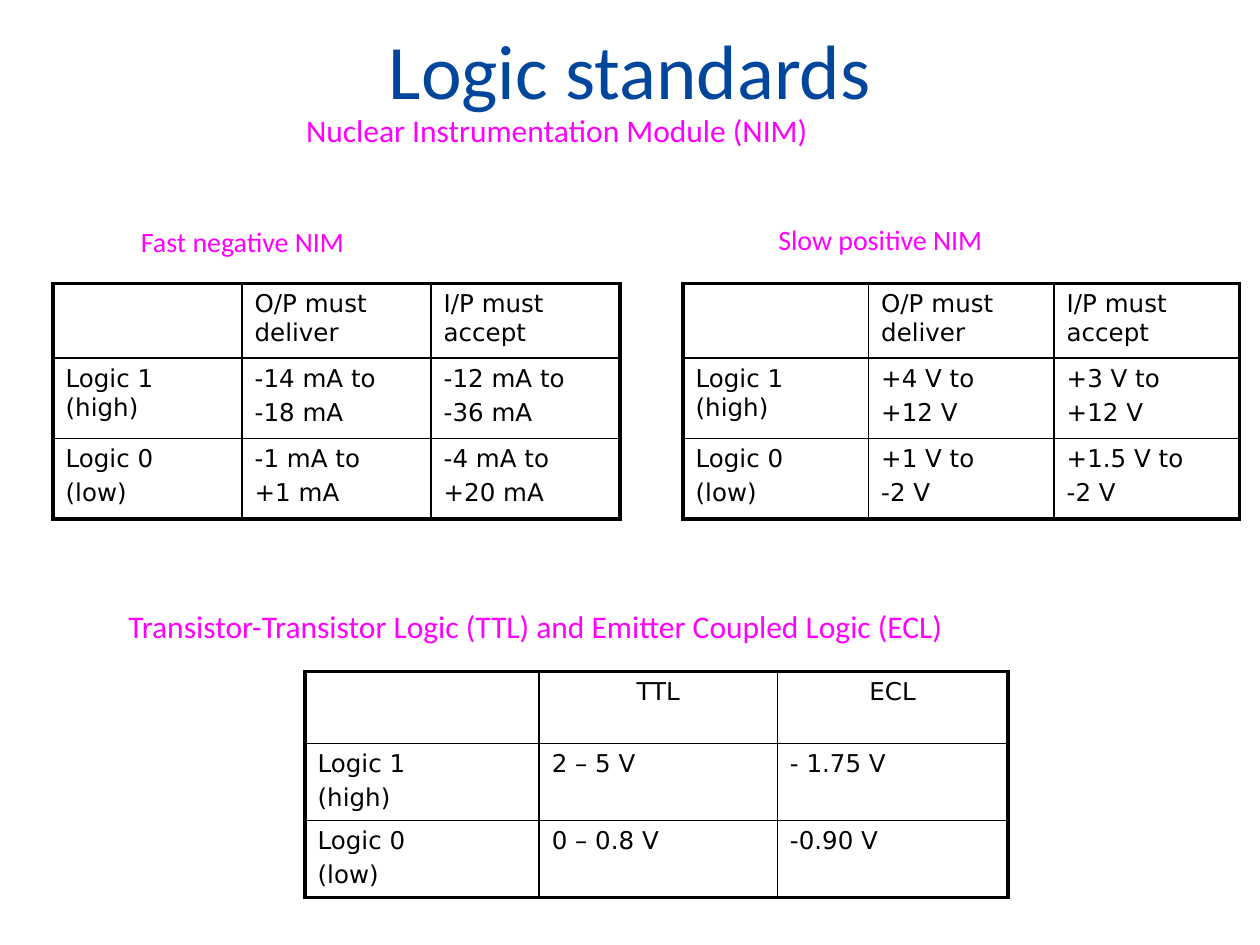
from dataclasses import dataclass

from lxml.etree import SubElement
from pptx import Presentation
from pptx.dml.color import RGBColor
from pptx.enum.text import MSO_ANCHOR, PP_ALIGN
from pptx.oxml.ns import qn
from pptx.util import Cm, Pt


@dataclass(frozen=True)
class Theme:
    heading_font: str = "Calibri"
    table_font: str = "DejaVu Sans"
    title_color: str = "00469C"
    heading_color: str = "FF00FF"
    table_color: str = "000000"
    title_size: float = 44
    section_size: float = 18
    caption_size: float = 16
    table_size: float = 14
    line_gap: float = 2.8
    outer_border: float = 2.25
    inner_border: float = 1


THEME = Theme()

TITLE = ("Logic standards", (1.27, -0.2, 22.86, 3.18))

# text, size, (left, top, width, height) in cm
HEADINGS = [
    ("Nuclear Instrumentation Module (NIM)", THEME.section_size, (5.92, 2.11, 12.88, 1.02)),
    ("Fast negative NIM", THEME.caption_size, (2.59, 4.4, 5.66, 0.94)),
    ("Slow positive NIM", THEME.caption_size, (15.44, 4.36, 5.59, 0.94)),
    ("Transistor-Transistor Logic (TTL) and Emitter Coupled Logic (ECL)",
     THEME.section_size, (2.34, 12.12, 21.84, 1.02)),
]

NIM_HEADER = ["", "O/P must deliver", "I/P must accept"]
NIM_ROWS = [1.5, 1.62, 1.62]

# Each line within a cell is a paragraph of its own.
TABLES = [
    {
        "origin": (1.07, 5.72), "columns": [3.81] * 3, "rows": NIM_ROWS,
        "header_alignment": PP_ALIGN.LEFT,
        "cells": [
            NIM_HEADER,
            ["Logic 1 (high)", "-14 mA to\n-18 mA", "-12 mA to\n-36 mA"],
            ["Logic 0\n(low)", "-1 mA to\n+1 mA", "-4 mA to\n+20 mA"],
        ],
    },
    {
        "origin": (13.77, 5.72), "columns": [3.74] * 3, "rows": NIM_ROWS,
        "header_alignment": PP_ALIGN.LEFT,
        "cells": [
            NIM_HEADER,
            ["Logic 1 (high)", "+4 V to\n+12 V", "+3 V to\n+12 V"],
            ["Logic 0\n(low)", "+1 V to\n-2 V", "+1.5 V to\n-2 V"],
        ],
    },
    {
        "origin": (6.15, 13.54), "columns": [4.72, 4.8, 4.65], "rows": [1.45, 1.55, 1.55],
        "header_alignment": PP_ALIGN.CENTER,
        "cells": [
            ["", "TTL", "ECL"],
            ["Logic 1\n(high)", "2 – 5 V", "- 1.75 V"],
            ["Logic 0\n(low)", "0 – 0.8 V", "-0.90 V"],
        ],
    },
]


def add_run(paragraph, text, font_name, size, color):
    run = paragraph.add_run()
    run.text = text
    run.font.name = font_name
    run.font.size = Pt(size)
    run.font.color.rgb = RGBColor.from_string(color)


def add_text(slide, text, box, size, color, alignment=PP_ALIGN.LEFT, anchor=MSO_ANCHOR.TOP):
    frame = slide.shapes.add_textbox(*map(Cm, box)).text_frame
    frame.word_wrap = True
    frame.vertical_anchor = anchor
    paragraph = frame.paragraphs[0]
    paragraph.alignment = alignment
    add_run(paragraph, text, THEME.heading_font, size, color)


def set_borders(cell, widths):
    """Draw solid cell borders; widths maps L, R, T, B (in that order) to points."""
    properties = cell._tc.get_or_add_tcPr()
    for side, width in widths.items():
        line = SubElement(properties, qn(f"a:ln{side}"), w=str(Pt(width)))
        fill = SubElement(line, qn("a:solidFill"))
        SubElement(fill, qn("a:srgbClr"), val=THEME.table_color)


def fill_cell(cell, text, alignment):
    for index, line in enumerate(text.split("\n") if text else []):
        frame = cell.text_frame
        paragraph = frame.add_paragraph() if index else frame.paragraphs[0]
        paragraph.alignment = alignment
        if index:
            paragraph.space_before = Pt(THEME.line_gap)
        add_run(paragraph, line, THEME.table_font, THEME.table_size, THEME.table_color)


def add_logic_table(slide, data):
    columns, rows = data["columns"], data["rows"]
    box = (*data["origin"], sum(columns), sum(rows))
    table = slide.shapes.add_table(len(rows), len(columns), *map(Cm, box)).table
    table.first_row = table.horz_banding = False
    for column, width in zip(table.columns, columns):
        column.width = Cm(width)
    for row, height in zip(table.rows, rows):
        row.height = Cm(height)

    for r, texts in enumerate(data["cells"]):
        for c, text in enumerate(texts):
            cell = table.cell(r, c)
            on_edge = {"L": c == 0, "R": c == len(columns) - 1,
                       "T": r == 0, "B": r == len(rows) - 1}
            set_borders(cell, {side: THEME.outer_border if edge else THEME.inner_border
                               for side, edge in on_edge.items()})
            cell.fill.background()
            fill_cell(cell, text, PP_ALIGN.LEFT if r else data["header_alignment"])


def main():
    presentation = Presentation()
    presentation.slide_width, presentation.slide_height = Cm(25.4), Cm(19.05)
    slide = presentation.slides.add_slide(presentation.slide_layouts[6])

    add_text(slide, *TITLE, THEME.title_size, THEME.title_color,
             PP_ALIGN.CENTER, MSO_ANCHOR.MIDDLE)
    for data in TABLES:
        add_logic_table(slide, data)
    for text, size, box in HEADINGS:
        add_text(slide, text, box, size, THEME.heading_color)

    presentation.save("out.pptx")


if __name__ == "__main__":
    main()
